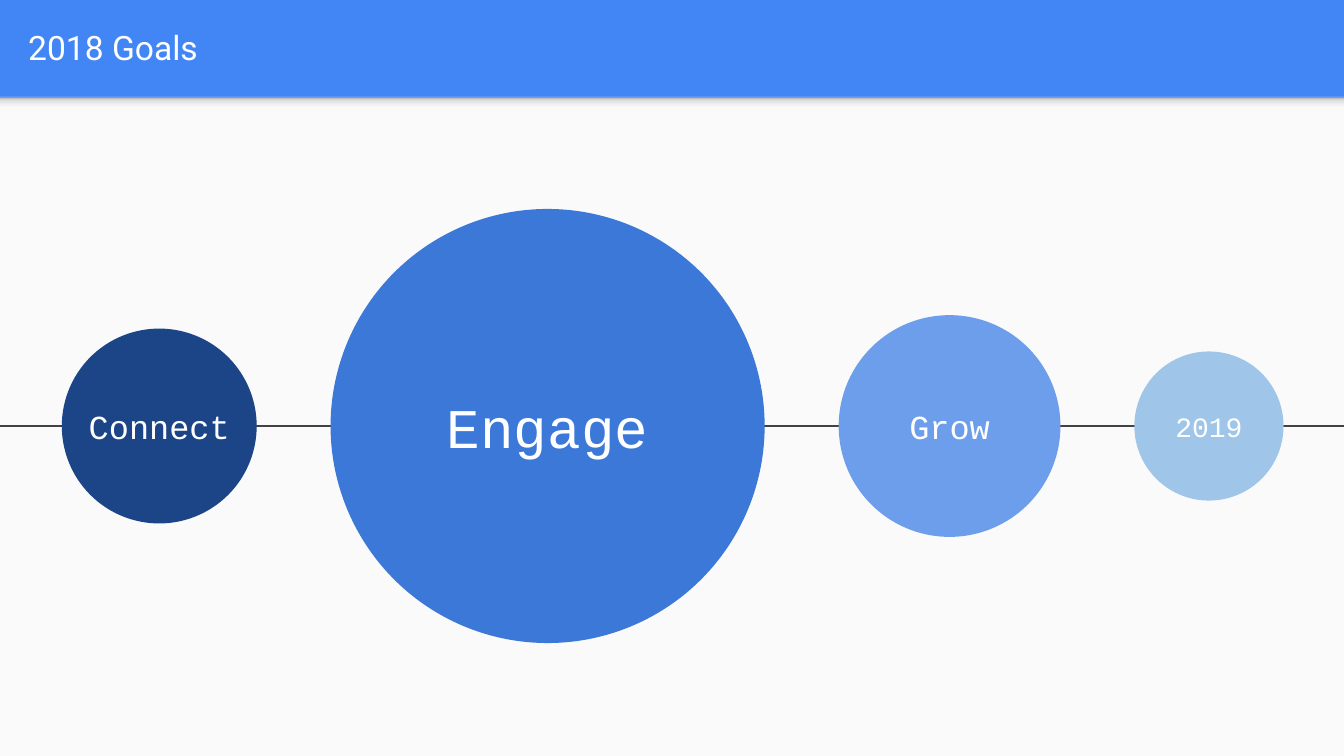
from copy import deepcopy
from pptx import Presentation
from pptx.dml.color import RGBColor
from pptx.enum import shapes, text
from pptx.oxml.ns import qn
from pptx.util import Inches, Pt
from lxml import etree

# Content: label, diameter, fill, type size
TITLE = "2018 Goals"
GOALS = [
    ("Connect", 1.45, "1C4587", 18),
    ("Engage", 3.23, "3C78D8", 30),
    ("Grow", 1.65, "6D9EEB", 18),
    ("2019", 1.11, "9FC5E8", 15),
]


class Theme:
    header, panel, line, white = "4285F4", "FAFAFA", "424242", "FFFFFF"
    shade = [(0, "F9F9F9"), (0.36, "F9F9F9"), (0.8, "DEDEDE"), (1, "999999")]
    head, label = "Roboto", "Courier New"
    title = 18


# Layout in inches, on a 16:9 slide
WIDE = 10
HIGH = WIDE * 9 / 16
BAR, AXIS = 0.72, 3.17
LEFT, GAP, ROW = 0.46, 0.55, 0.66


def rgb(code):
    return RGBColor.from_string(code)


def box(*sides):
    return [Inches(side) for side in sides]


def draw(slide, kind, sides, fill=None):
    shape = slide.shapes.add_shape(kind, *box(*sides))
    shape.shadow.inherit = False
    shape.line.fill.background()
    if fill:
        shape.fill.solid()
        shape.fill.fore_color.rgb = rgb(fill)
    return shape


def write(shape, words, face, size, align):
    frame = shape.text_frame
    frame.text = words
    frame.word_wrap = True
    frame.auto_size = text.MSO_AUTO_SIZE.NONE
    frame.vertical_anchor = text.MSO_ANCHOR.MIDDLE
    frame.margin_left = frame.margin_right = Inches(0.1)
    frame.margin_top = frame.margin_bottom = Inches(0.1)
    para = frame.paragraphs[0]
    para.alignment = align
    para.font.name, para.font.size = face, Pt(size)
    para.font.color.rgb = rgb(Theme.white)


def shade(shape, stops):
    fill = shape.fill
    fill.gradient()
    fill.gradient_angle = 90
    group = shape.element.spPr.find(qn("a:gradFill")).find(qn("a:gsLst"))
    while len(group) < len(stops):
        group.append(deepcopy(group[0]))
    for stop, (spot, code) in zip(fill.gradient_stops, stops):
        stop.position = spot
        stop.color.rgb = rgb(code)


def main():
    deck = Presentation()
    deck.slide_width, deck.slide_height = box(WIDE, HIGH)
    slide = deck.slides.add_slide(deck.slide_layouts[5])
    slide.background.fill.solid()
    slide.background.fill.fore_color.rgb = rgb(Theme.header)

    # Title on the header bar
    title = slide.shapes.title
    title.left, title.top, title.width, title.height = box(0.11, 0.02, 9.65, ROW)
    write(title, TITLE, Theme.head, Theme.title, text.PP_ALIGN.LEFT)

    # Panel and the shade under the header
    rect = shapes.MSO_SHAPE.RECTANGLE
    draw(slide, rect, (0, BAR, WIDE, HIGH - BAR), Theme.panel)
    shade(draw(slide, rect, (0, BAR, WIDE, 0.12)), Theme.shade)

    # Timeline
    axis = slide.shapes.add_connector(
        shapes.MSO_CONNECTOR.STRAIGHT, *box(0, AXIS, WIDE, AXIS))
    axis.line.color.rgb = rgb(Theme.line)
    axis.line.width = Pt(1.5)
    etree.SubElement(axis.element.spPr, qn("a:effectLst"))

    # Goals, evenly spaced along the timeline
    left = LEFT
    for label, size, fill, type_size in GOALS:
        draw(slide, shapes.MSO_SHAPE.OVAL,
             (left, AXIS - size / 2, size, size), fill)
        note = slide.shapes.add_textbox(*box(left, AXIS - ROW / 2, size, ROW))
        write(note, label, Theme.label, type_size, text.PP_ALIGN.CENTER)
        left += size + GAP

    deck.save("out.pptx")


if __name__ == "__main__":
    main()
